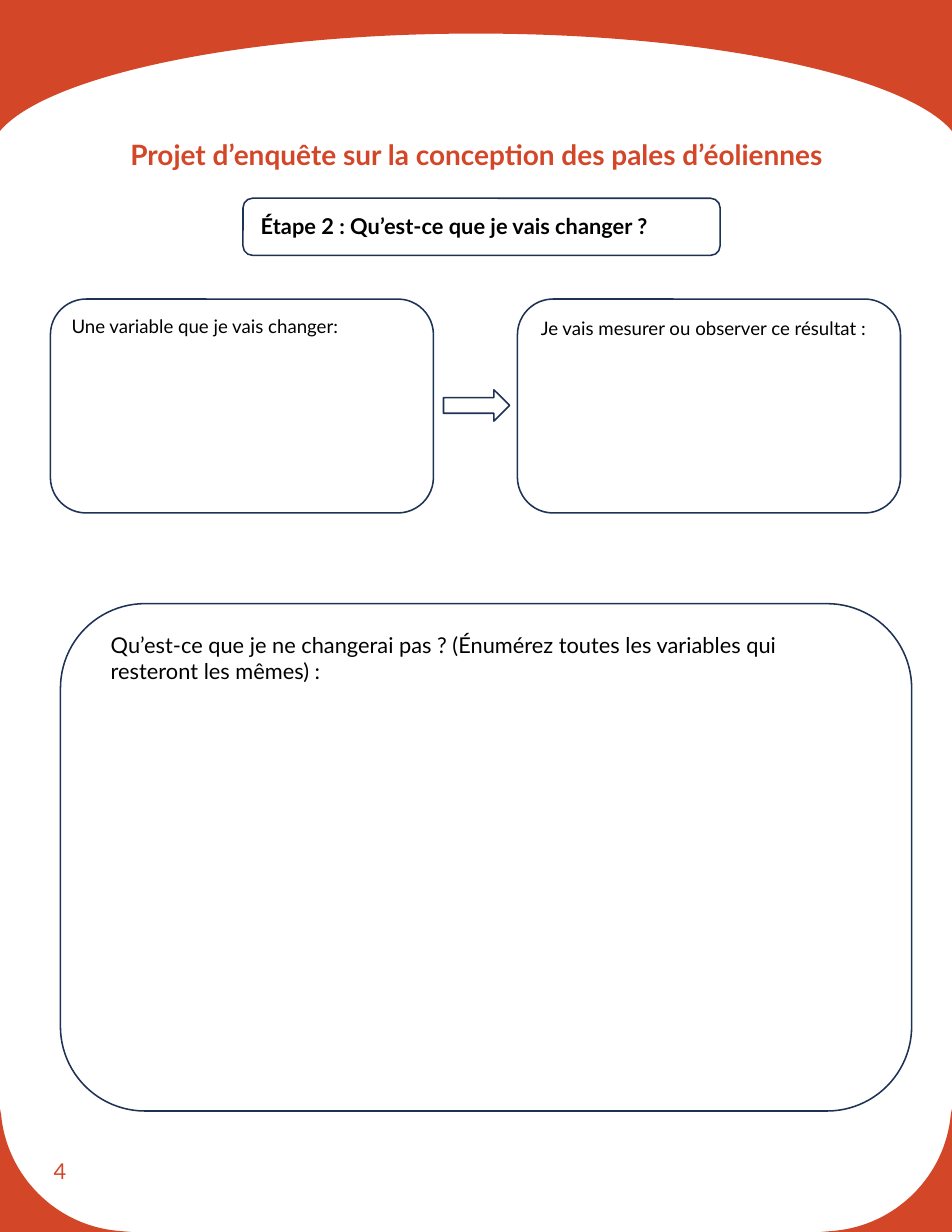
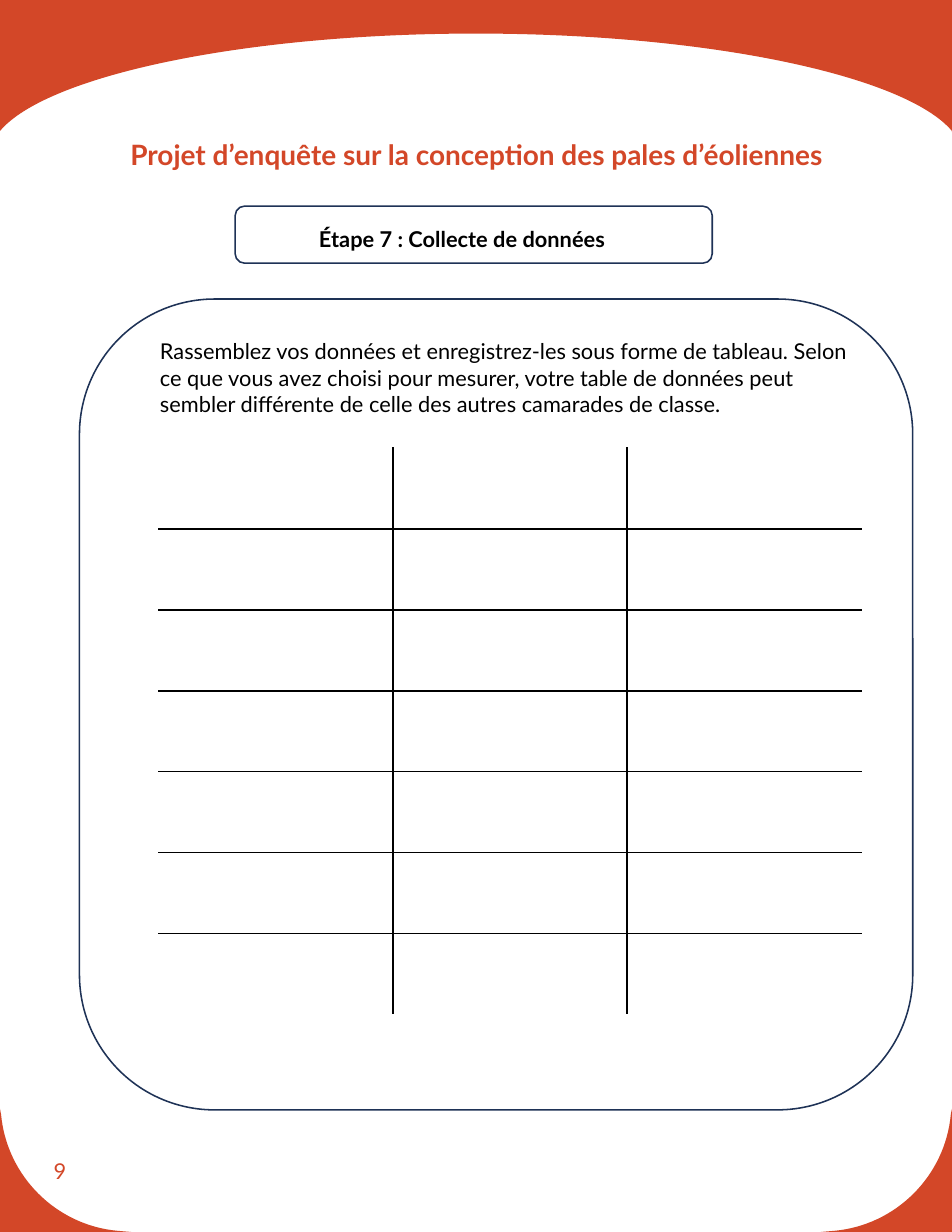
import pptx
import pptx.dml.color
import pptx.enum.shapes
import pptx.enum.text
import pptx.oxml.ns
import pptx.util
from lxml import etree

EMU_PER_PX = 9144  # 100 px to the inch
PAGE_WIDTH, PAGE_HEIGHT = 850, 1100

ORANGE = pptx.dml.color.RGBColor(0xD3, 0x47, 0x28)
NAVY = pptx.dml.color.RGBColor(0x1E, 0x32, 0x56)
BLACK = pptx.dml.color.RGBColor(0x00, 0x00, 0x00)
WHITE = pptx.dml.color.RGBColor(0xFF, 0xFF, 0xFF)

FONT = "Lato"
PROJECT_TITLE = "Projet d’enquête sur la conception des pales d’éoliennes"
TITLE_ONLY = 5
ROUNDED = pptx.enum.shapes.MSO_SHAPE.ROUNDED_RECTANGLE
ARROW = pptx.enum.shapes.MSO_SHAPE.RIGHT_ARROW
ANCHOR = pptx.enum.text.MSO_ANCHOR

# Band outlines: one point is a corner, three points are a cubic curve
ARCH = [[(0, 0)], [(850, 0)], [(850, 118)], [(850, 117)],
        [(809, 68), (634, 30), (425, 30)],
        [(216, 30), (41, 68), (0, 117)], [(0, 118)]]
LEFT_CORNER = [[(0, 990)], [(1, 995)], [(6, 1050), (50, 1094), (105, 1099)],
               [(117, 1100)], [(0, 1100)]]
RIGHT_CORNER = [[(PAGE_WIDTH - x, y) for x, y in segment] for segment in LEFT_CORNER]


def px(length):
    return pptx.util.Emu(length * EMU_PER_PX)


# Shared frame
def add_band(slide, segments):
    points = [point for segment in segments for point in segment]
    builder = slide.shapes.build_freeform(*points[0], scale=EMU_PER_PX)
    builder.add_line_segments(points[1:], close=True)
    band = builder.convert_to_shape()
    band.shadow.inherit = False
    band.fill.solid()
    band.fill.fore_color.rgb = ORANGE
    band.line.fill.background()
    bend_curves(band, segments)
    return band


def bend_curves(band, segments):
    """Turn each run of three lines that stands for a curve into a real curve."""
    lines = iter(band.element.findall(".//" + pptx.oxml.ns.qn("a:lnTo")))
    for segment in segments[1:]:
        segment_lines = [next(lines) for _ in segment]
        if len(segment) == 3:
            curve = etree.Element(pptx.oxml.ns.qn("a:cubicBezTo"))
            segment_lines[0].addprevious(curve)
            for line in segment_lines:
                curve.append(line[0])
                line.getparent().remove(line)


def put_bands_on_layout(slide):
    """Draw the page bands and move them to the layout that all slides use."""
    for segments in (ARCH, LEFT_CORNER, RIGHT_CORNER):
        band = add_band(slide, segments)
        slide.slide_layout.shapes.element.append(band.element)


def format_paragraph(paragraph, size, color, bold=False):
    paragraph.font.name = FONT
    paragraph.font.size = pptx.util.Pt(size)
    paragraph.font.bold = bold
    paragraph.font.color.rgb = color


def add_text(slide, left, top, width, height, text, size=14, color=BLACK,
             bold=False, anchor=ANCHOR.TOP):
    box = slide.shapes.add_textbox(px(left), px(top), px(width), px(height))
    frame = box.text_frame
    frame.word_wrap = True
    frame.vertical_anchor = anchor
    frame.text = text
    format_paragraph(frame.paragraphs[0], size, color, bold)


def add_outline(slide, kind, left, top, width, height):
    shape = slide.shapes.add_shape(kind, px(left), px(top), px(width), px(height))
    shape.shadow.inherit = False
    shape.fill.background()
    shape.line.color.rgb = NAVY
    shape.line.width = pptx.util.Pt(1)


def set_title(slide):
    title = slide.shapes.title
    title.left, title.top, title.width, title.height = px(36), px(109), px(779), px(86)
    frame = title.text_frame
    frame.text = PROJECT_TITLE
    frame.word_wrap = True
    frame.auto_size = pptx.enum.text.MSO_AUTO_SIZE.NONE
    frame.vertical_anchor = ANCHOR.TOP
    paragraph = frame.paragraphs[0]
    paragraph.alignment = pptx.enum.text.PP_ALIGN.CENTER
    paragraph.line_spacing = 1.3
    paragraph.space_before = pptx.util.Pt(0)
    format_paragraph(paragraph, 18, ORANGE, bold=True)


def add_page(presentation, number):
    slide = presentation.slides.add_slide(presentation.slide_layouts[TITLE_ONLY])
    add_text(slide, 38, 1016, 191, 59, number, color=ORANGE, anchor=ANCHOR.MIDDLE)
    set_title(slide)
    return slide


def add_step(slide, left, top, text, text_left, text_top):
    add_outline(slide, ROUNDED, left, top, 426, 51)
    add_text(slide, text_left, text_top, 413, 34, text, bold=True)


# Data table: black inner rules, white outer edge
def set_borders(cell, colors):
    properties = cell._tc.get_or_add_tcPr()
    for side, color in colors.items():
        line = etree.SubElement(properties, pptx.oxml.ns.qn("a:ln" + side), w="12700")
        fill = etree.SubElement(line, pptx.oxml.ns.qn("a:solidFill"))
        etree.SubElement(fill, pptx.oxml.ns.qn("a:srgbClr"), val=str(color))


def add_data_table(slide, left, top, width, height, row_count, column_count):
    table = slide.shapes.add_table(row_count, column_count, px(left), px(top),
                                   px(width), px(height)).table
    table.first_row = False
    table.horz_banding = False
    for row in range(row_count):
        for column in range(column_count):
            cell = table.cell(row, column)
            on_edge = {"L": column == 0, "R": column == column_count - 1,
                       "T": row == 0, "B": row == row_count - 1}
            set_borders(cell, {side: WHITE if edge else BLACK
                               for side, edge in on_edge.items()})
            cell.fill.background()


def build_variables_page(presentation):
    slide = add_page(presentation, "4")
    put_bands_on_layout(slide)
    add_step(slide, 217, 177, "Étape 2 : Qu’est-ce que je vais changer ?", 223, 185)

    # Variable leads to result
    for left in (45, 462):
        add_outline(slide, ROUNDED, left, 267, 342, 191)
    add_outline(slide, ARROW, 396, 348, 59, 28)
    add_text(slide, 54, 276, 258, 50, "Une variable que je vais changer:", size=12)
    add_text(slide, 473, 278, 312, 50, "Je vais mesurer ou observer ce résultat :", size=12)

    # Constants
    add_outline(slide, ROUNDED, 54, 539, 760, 453)
    add_text(slide, 89, 559, 671, 57,
             "Qu’est-ce que je ne changerai pas ? (Énumérez toutes les variables "
             "qui resteront les mêmes) :")


def build_data_page(presentation):
    slide = add_page(presentation, "9")
    add_step(slide, 210, 184, "Étape 7 : Collecte de données", 275, 197)

    # Data collection
    add_outline(slide, ROUNDED, 71, 267, 744, 724)
    add_text(slide, 133, 297, 646, 104,
             "Rassemblez vos données et enregistrez-les sous forme de tableau. Selon "
             "ce que vous avez choisi pour mesurer, votre table de données peut "
             "sembler différente de celle des autres camarades de classe.")
    add_data_table(slide, 142, 400, 627, 506, row_count=7, column_count=3)


def main():
    presentation = pptx.Presentation()
    presentation.slide_width = px(PAGE_WIDTH)
    presentation.slide_height = px(PAGE_HEIGHT)
    build_variables_page(presentation)
    build_data_page(presentation)
    presentation.save("out.pptx")


if __name__ == "__main__":
    main()
